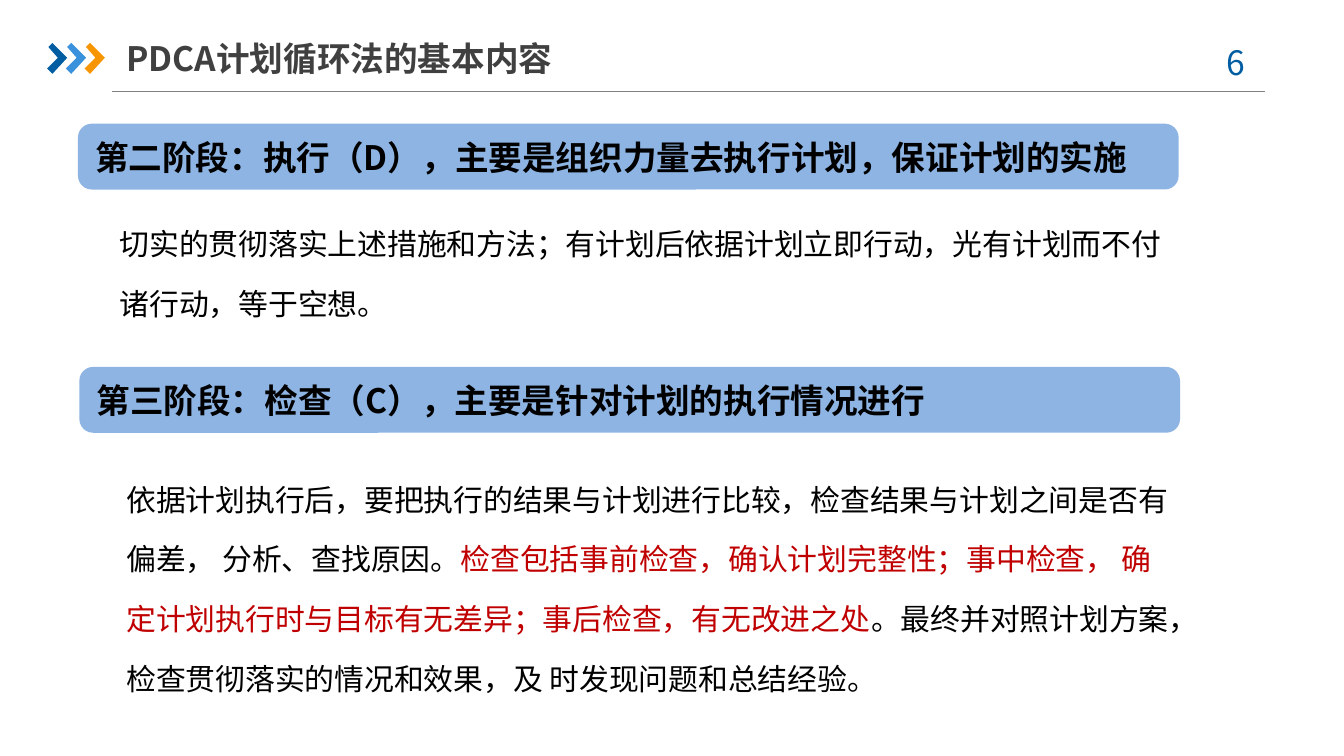
"""Build the slide on the execution and checking stages of the PDCA cycle."""
from lxml import etree
from pptx import Presentation
from pptx.dml.color import RGBColor
from pptx.enum.shapes import MSO_CONNECTOR, MSO_SHAPE
from pptx.enum.text import MSO_ANCHOR, PP_ALIGN
from pptx.oxml.ns import qn
from pptx.util import Inches, Pt

FONT = "Noto Sans CJK SC"
COLORS = {
    "navy": "005DA2", "blue": "3992DB", "orange": "F79600", "rule": "808080",
    "title": "404040", "banner": "8EB4E3", "black": "000000", "red": "C00000",
}


def add_run(paragraph, text, size, color, bold=False):
    run = paragraph.add_run()
    run.text = text
    run.font.size = Pt(size)
    run.font.bold = bold
    run.font.color.rgb = RGBColor.from_string(COLORS[color])
    run.font.name = FONT
    etree.SubElement(run._r.get_or_add_rPr(), qn("a:ea"), typeface=FONT)


def add_text_box(slide, left, top, width, height, anchor=MSO_ANCHOR.TOP):
    box = slide.shapes.add_textbox(Inches(left), Inches(top), Inches(width), Inches(height))
    frame = box.text_frame
    frame.word_wrap = True
    frame.vertical_anchor = anchor
    frame.margin_left = frame.margin_right = 0
    return frame


presentation = Presentation()
presentation.slide_width = Inches(10)
presentation.slide_height = presentation.slide_width * 9 // 16
slide = presentation.slides.add_slide(presentation.slide_layouts[6])

rule = slide.shapes.add_connector(
    MSO_CONNECTOR.STRAIGHT, Inches(0.83), Inches(0.68), Inches(9.41), Inches(0.68))
rule.line.color.rgb = RGBColor.from_string(COLORS["rule"])
rule.line.width = Pt(0.75)
etree.SubElement(rule._element.spPr, qn("a:effectLst"))

chevron = [(0.01, 0.03), (0.04, 0), (0.15, 0.11), (0.04, 0.23), (0, 0.19), (0.08, 0.11)]
for index, color in enumerate(["navy", "blue", "orange"]):
    points = [(Inches(0.35 + 0.14 * index + x), Inches(0.32 + y)) for x, y in chevron]
    builder = slide.shapes.build_freeform(*points[0])
    builder.add_line_segments(points[1:], close=True)
    shape = builder.convert_to_shape()
    shape.shadow.inherit = False
    shape.fill.solid()
    shape.fill.fore_color.rgb = RGBColor.from_string(COLORS[color])
    shape.line.fill.background()

number = add_text_box(slide, 8.83, 0.26, 0.73, 0.4).paragraphs[0]
number.alignment = PP_ALIGN.CENTER
add_run(number, "6", 18, "navy")

title = add_text_box(slide, 0.94, 0.22, 6.98, 0.42, MSO_ANCHOR.MIDDLE).paragraphs[0]
add_run(title, "PDCA计划循环法的基本内容", 18, "title", True)

stages = [
    (0.3, 0, [
        [("切实的贯彻落实上述措施和方法；有计划后依据计划立即行动，光有计划而不付", "black")],
        [("诸行动，等于空想。", "black")],
    ]),
    (0.35, 73, [
        [("依据计划执行后，要把执行的结果与计划进行比较，检查结果与计划之间是否有", "black")],
        [("偏差， 分析、查找原因。", "black"),
         ("检查包括事前检查，确认计划完整性；事中检查， 确", "red")],
        [("定计划执行时与目标有无差异；事后检查，有无改进之处", "red"),
         ("。最终并对照计划方案，", "black")],
        [("检查贯彻落实的情况和效果，及 时发现问题和总结经验。", "black")],
    ]),
]
body = add_text_box(slide, 0.59, 0.92, 9.29, 4.7)
body.margin_top = Inches(0.58)
paragraph = body.paragraphs[0]
for indent, gap, lines in stages:
    for index, line in enumerate(lines):
        if paragraph.runs:
            paragraph = body.add_paragraph()
        paragraph._p.get_or_add_pPr().set("marL", str(Inches(indent)))
        paragraph.line_spacing = Pt(32)
        paragraph.space_before = Pt(0 if index else gap)
        for text, color in line:
            add_run(paragraph, text, 16, color)

banners = [
    (0.58, 0.92, "第二阶段：执行（D），主要是组织力量去执行计划，保证计划的实施"),
    (0.59, 2.73, "第三阶段：检查（C），主要是针对计划的执行情况进行"),
]
for left, top, text in banners:
    shape = slide.shapes.add_shape(
        MSO_SHAPE.ROUNDED_RECTANGLE, Inches(left), Inches(top), Inches(8.19), Inches(0.49))
    shape.adjustments[0] = 0.21
    shape.shadow.inherit = False
    shape.fill.solid()
    shape.fill.fore_color.rgb = RGBColor.from_string(COLORS["banner"])
    shape.line.fill.background()
    shape.text_frame.vertical_anchor = MSO_ANCHOR.MIDDLE
    paragraph = shape.text_frame.paragraphs[0]
    paragraph.alignment = PP_ALIGN.LEFT
    add_run(paragraph, text, 18, "black", True)

presentation.save("out.pptx")
